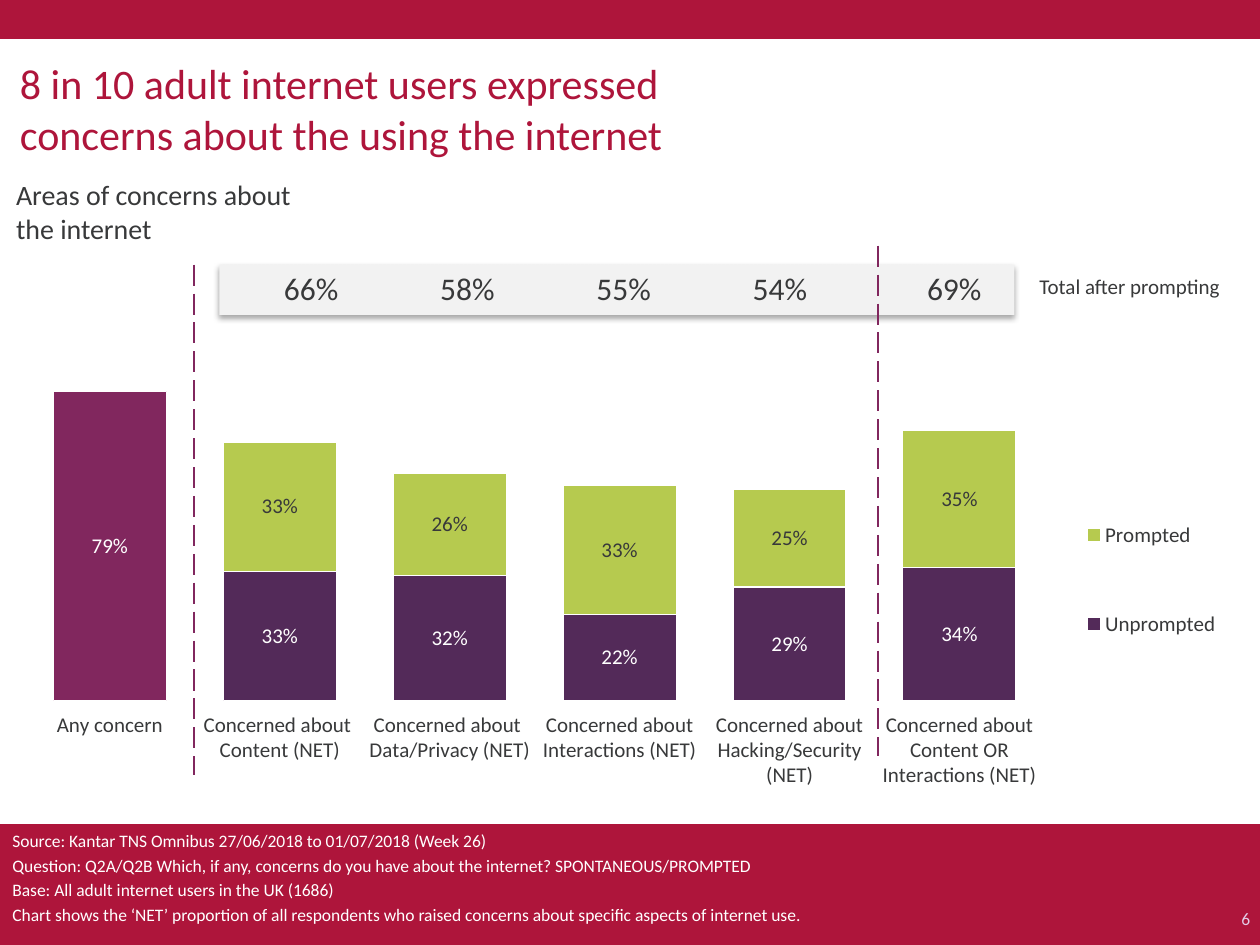
from dataclasses import dataclass

from lxml import etree
from pptx import Presentation
from pptx import util as u
from pptx.chart.data import CategoryChartData
from pptx.dml.color import RGBColor
from pptx.enum import chart as charts
from pptx.enum import dml, shapes, text
from pptx.oxml import parse_xml
from pptx.oxml.ns import nsdecls, qn

PLAIN_TABLE_STYLE = "{2D5ABB26-0587-4C30-8999-92F81FD0307C}"


@dataclass(frozen=True)
class Theme:
    font: str = "Calibri"
    brand: str = "AE153B"
    ink: str = "38393A"
    white: str = "FFFFFF"
    strip: str = "F2F2F2"
    page_number: str = "E3CCE7"
    plum: str = "81275E"
    purple: str = "532A59"
    lime: str = "B6CA4F"
    headline_size: int = 24
    total_size: int = 18
    title_size: int = 16
    label_size: int = 12
    note_size: int = 10


def color(value):
    return RGBColor.from_string(value)


def inches(box):
    return [u.Inches(length) for length in box]


def set_layout(parent, index, x, y, width, height, inner=False):
    """Give a plot area or legend a manual layout in fractions of the chart."""
    for layout in parent.findall(qn("c:layout")):
        parent.remove(layout)
    target = '<c:layoutTarget val="inner"/>' if inner else ""
    parent.insert(index, parse_xml(
        f'<c:layout {nsdecls("c")}><c:manualLayout>{target}'
        '<c:xMode val="edge"/><c:yMode val="edge"/>'
        f'<c:x val="{x}"/><c:y val="{y}"/><c:w val="{width}"/><c:h val="{height}"/>'
        '</c:manualLayout></c:layout>'))


class SlideBuilder:
    def __init__(self, slide, theme):
        self.slide = slide
        self.theme = theme

    def style(self, font, size, ink):
        font.name = self.theme.font
        font.size = u.Pt(size)
        font.color.rgb = color(ink)

    def add_run(self, paragraph, words, size, ink):
        run = paragraph.add_run()
        run.text = words
        self.style(run.font, size, ink)

    def band(self, box, fill):
        shape = self.slide.shapes.add_shape(shapes.MSO_SHAPE.RECTANGLE, *inches(box))
        shape.shadow.inherit = False
        shape.fill.solid()
        shape.fill.fore_color.rgb = color(fill)
        shape.line.fill.background()
        return shape

    def raised_band(self, box, fill):
        """Add a band with a soft shadow below it."""
        shape = self.band(box, fill)
        effects = shape._element.spPr.find(qn("a:effectLst"))
        effects.append(parse_xml(
            f'<a:outerShdw {nsdecls("a")} blurRad="{u.Pt(3.1)}" dist="{u.Pt(1.8)}" '
            'dir="5400000" algn="t" rotWithShape="0"><a:srgbClr val="000000">'
            '<a:alpha val="35000"/></a:srgbClr></a:outerShdw>'))

    def text(self, box, lines, size, ink, align=text.PP_ALIGN.LEFT, wrap=True, gap=0):
        frame = self.slide.shapes.add_textbox(*inches(box)).text_frame
        frame.word_wrap = wrap
        for number, line in enumerate(lines):
            paragraph = frame.add_paragraph() if number else frame.paragraphs[0]
            paragraph.alignment = align
            if number:
                paragraph.space_before = u.Pt(gap)
            self.add_run(paragraph, line, size, ink)

    def totals(self, box, values):
        """Add a one-row table without fills or borders."""
        frame = self.slide.shapes.add_table(1, len(values), *inches(box))
        table = frame.table
        table.first_row = table.horz_banding = False
        table._tbl.tblPr.find(qn("a:tableStyleId")).text = PLAIN_TABLE_STYLE
        for cell, value in zip(table.rows[0].cells, values):
            cell.fill.background()
            if value:
                paragraph = cell.text_frame.paragraphs[0]
                paragraph.alignment = text.PP_ALIGN.CENTER
                self.add_run(paragraph, value, self.theme.total_size, self.theme.ink)

    def divider(self, x, top, bottom):
        line = self.slide.shapes.add_connector(
            shapes.MSO_CONNECTOR.STRAIGHT, *inches((x, top, x, bottom)))
        line.line.color.rgb = color(self.theme.plum)
        line.line.width = u.Pt(1.5)
        line.line.dash_style = dml.MSO_LINE.LONG_DASH
        etree.SubElement(line._element.spPr, qn("a:effectLst"))

    def stacked_chart(self, box, categories, series):
        """Add the stacked columns; series holds (name, values, fill, label color)."""
        theme = self.theme
        data = CategoryChartData(number_format="0%")
        data.categories = categories
        for name, values, _, _ in series:
            data.add_series(name, values)
        chart = self.slide.shapes.add_chart(
            charts.XL_CHART_TYPE.COLUMN_STACKED, *inches(box), data).chart
        chart.has_title = False
        self.style(chart.font, theme.label_size, theme.ink)

        plot = chart.plots[0]
        plot.gap_width, plot.overlap = 50, 100
        plot.vary_by_categories = False
        for bars, (_, _, fill, label_ink) in zip(plot.series, series):
            self.paint(bars.format, fill)
            labels = bars.data_labels
            labels.show_value = True
            labels.number_format = "0%"
            labels.number_format_is_linked = False
            labels.position = charts.XL_LABEL_POSITION.CENTER
            self.style(labels.font, theme.label_size, label_ink)
        self.paint(plot.series[0].points[0].format, theme.plum)

        chart.category_axis.format.line.fill.background()
        chart.category_axis.major_tick_mark = charts.XL_TICK_MARK.OUTSIDE
        axis = chart.value_axis
        axis.minimum_scale, axis.maximum_scale, axis.major_unit = 0, 1, 0.2
        axis.has_major_gridlines = False
        axis.visible = False

        chart.has_legend = True
        legend = chart.legend
        legend.position = charts.XL_LEGEND_POSITION.RIGHT
        legend.include_in_layout = False
        self.style(legend.font, theme.label_size, theme.ink)
        set_layout(legend._element, 1, 0.85, 0.32, 0.14, 0.47)
        plot_area = chart._chartSpace.chart.plotArea
        set_layout(plot_area, 0, 0.015, 0.03, 0.819, 0.76, inner=True)

    def paint(self, bar_format, fill):
        bar_format.fill.solid()
        bar_format.fill.fore_color.rgb = color(fill)
        bar_format.line.color.rgb = color(self.theme.white)
        bar_format.line.width = u.Pt(0.75)


def main():
    theme = Theme()
    presentation = Presentation()
    presentation.slide_width, presentation.slide_height = u.Inches(10), u.Inches(7.5)
    slide = presentation.slides.add_slide(presentation.slide_layouts[6])
    builder = SlideBuilder(slide, theme)

    builder.band((0, 0, 10, 0.31), theme.brand)
    builder.band((0, 6.54, 10, 0.96), theme.brand)
    builder.text((9.57, 7.16, 0.45, 0.28), ["6"], theme.note_size, theme.page_number,
                 align=text.PP_ALIGN.RIGHT)
    builder.raised_band((1.74, 2.1, 6.31, 0.4), theme.strip)
    builder.totals((1.85, 2.1, 4.96, 0.41), ["66%", "58%", "55%", "54%"])
    builder.text((0.06, 0.41, 6.28, 0.77),
                 ["8 in 10 adult internet users expressed concerns about the using the internet"],
                 theme.headline_size, theme.brand)
    builder.text((0.03, 1.36, 2.57, 0.59), ["Areas of concerns about the internet"],
                 theme.title_size, theme.ink)
    builder.text((0, 6.54, 9.65, 0.96), [
        "Source: Kantar TNS Omnibus 27/06/2018 to 01/07/2018 (Week 26)",
        "Question: Q2A/Q2B Which, if any, concerns do you have about the internet? "
        "SPONTANEOUS/PROMPTED",
        "Base: All adult internet users in the UK (1686)",
        "Chart shows the ‘NET’ proportion of all respondents who raised concerns about "
        "specific aspects of internet use.",
    ], theme.note_size, theme.white, gap=2)
    builder.stacked_chart(
        (0.05, 2.33, 9.88, 4.09),
        ["Any concern", "Concerned about \nContent (NET)",
         "Concerned about \nData/Privacy (NET)", "Concerned about\nInteractions (NET)",
         "Concerned about\nHacking/Security (NET)",
         "Concerned about Content OR Interactions (NET)"],
        [("Unprompted", (0.79, 0.33, 0.32, 0.22, 0.29, 0.34), theme.purple, theme.white),
         ("Prompted", (None, 0.33, 0.26, 0.33, 0.25, 0.35), theme.lime, theme.ink)])
    builder.text((8.15, 2.12, 1.69, 0.3), ["Total after prompting"],
                 theme.label_size, theme.ink, wrap=False)
    builder.divider(1.54, 2.1, 6.15)
    builder.totals((7.25, 2.1, 2.59, 0.47), ["69%", "", "", ""])
    builder.divider(6.97, 1.95, 6)
    presentation.save("out.pptx")


if __name__ == "__main__":
    main()
